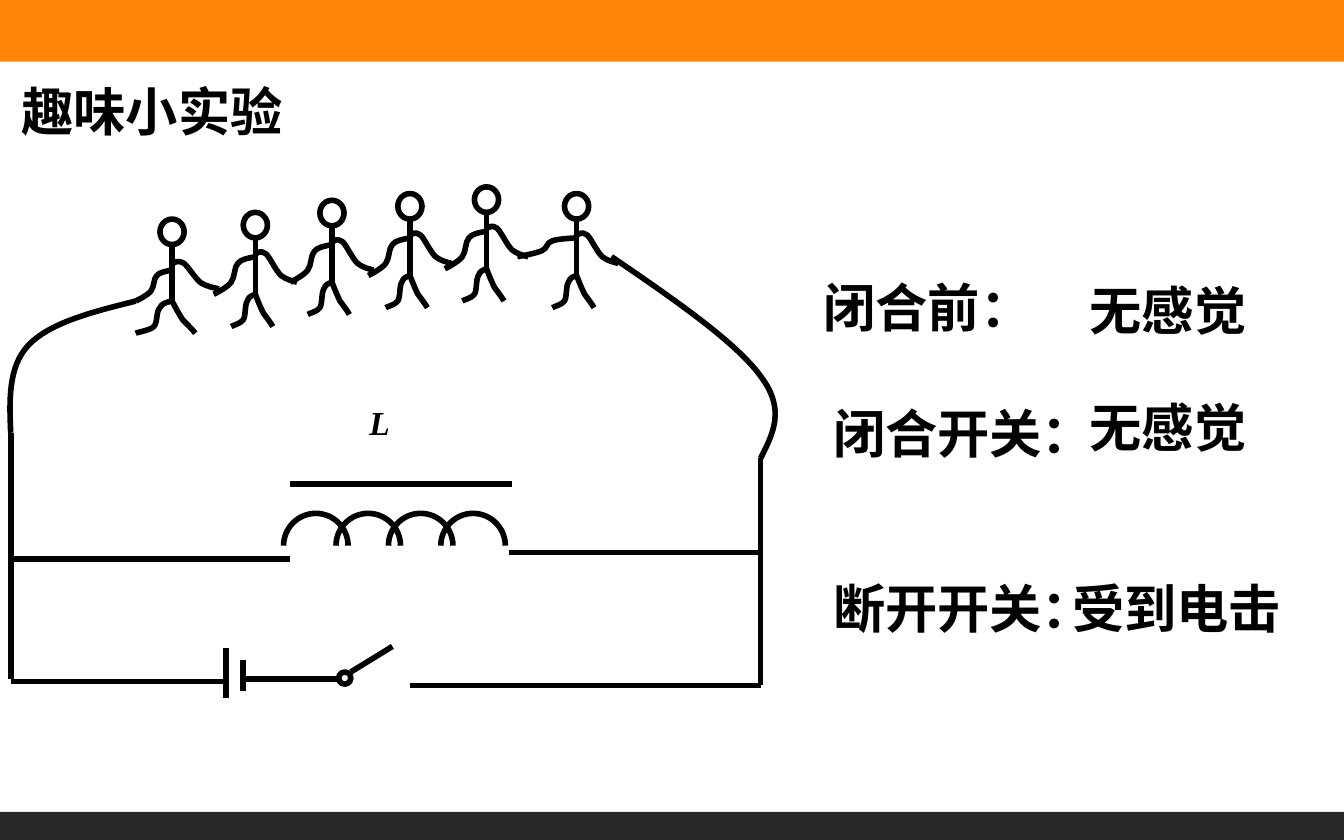
import pptx
import pptx.util
from lxml import etree
from pptx.dml.color import RGBColor
from pptx.enum.shapes import MSO_CONNECTOR, MSO_SHAPE
from pptx.enum.text import MSO_ANCHOR, MSO_AUTO_SIZE, PP_ALIGN
from pptx.oxml.ns import qn
from pptx.util import Inches, Pt

ORANGE = RGBColor(0xFF, 0x86, 0x07)
CHARCOAL = RGBColor(0x28, 0x28, 0x28)
BLACK = RGBColor(0, 0, 0)
WHITE = RGBColor(0xFF, 0xFF, 0xFF)

TITLE = ("趣味小实验", 0.06, 0.54, 5.53)
# text, left, top, width
OBSERVATIONS = [
    ("闭合前：", 6.03, 2, 2.25),
    ("闭合开关：", 6.1, 2.94, 2.25),
    ("断开开关：", 6.1, 4.24, 2.25),
    ("无感觉", 8.01, 2.02, 1.58),
    ("无感觉", 8.01, 2.89, 1.58),
    ("受到电击", 7.88, 4.24, 2.04),
]
BARS = [(-0.04, 0.5, ORANGE), (6.04, 0.21, CHARCOAL)]  # top, height, colour

# Limbs are cubic curves given from the joint where they start.
BACK_LEG = [(0, 0), (-0.03, 0.01), (-0.05, 0.02), (-0.06, 0.05), (-0.08, 0.08),
            (-0.07, 0.16), (-0.09, 0.19), (-0.11, 0.22), (-0.17, 0.23), (-0.18, 0.24)]
FRONT_LEG = [(0, 0), (0.02, 0.05), (0.04, 0.1), (0.06, 0.14),
             (0.09, 0.18), (0.12, 0.22), (0.13, 0.24)]
LEFT_ARM = [(0, 0), (-0.05, 0.01), (-0.11, 0.02), (-0.13, 0.05), (-0.16, 0.08),
            (-0.15, 0.15), (-0.18, 0.19), (-0.21, 0.23), (-0.29, 0.27), (-0.31, 0.28)]
RIGHT_ARM = [(0, 0), (0.02, -0.01), (0.04, -0.03), (0.08, 0), (0.11, 0.03),
             (0.15, 0.12), (0.19, 0.16), (0.23, 0.19), (0.27, 0.2), (0.31, 0.21)]
# curve, height of the joint above the hip, x scale, y scale
USUAL_LIMBS = {
    "back leg": (BACK_LEG, 0, 1, 1),
    "front leg": (FRONT_LEG, 0, 1, 1),
    "left arm": (LEFT_ARM, 0.28, 1, 1),
    "right arm": (RIGHT_ARM, 0.3, 1, 1),
}
# x and y of the hip, limbs that differ from the usual
PEOPLE = [
    (1.28, 2.24, {"back leg": (BACK_LEG, 0, 1.5, 1),
                  "front leg": (FRONT_LEG, 0, 1.33, 1),
                  "left arm": (LEFT_ARM, 0.23, 0.87, 0.82),
                  "right arm": (RIGHT_ARM, 0.28, 1.13, 0.9)}),
    (1.9, 2.19, {}),
    (2.47, 2.1, {}),
    (3.05, 2.05, {}),
    (3.62, 2, {}),
    (4.29, 2.05, {"left arm": (LEFT_ARM, 0.28, 1.42, 0.5)}),
]
BODY, HEAD_WIDTH, HEAD_HEIGHT = 0.42, 0.18, 0.19

LEFT, RIGHT = 0.08, 5.66  # the two upright wires
WIRES = [
    (1.68, 4.82, 1.68, 5.19), (1.81, 4.91, 1.81, 5.14),  # battery
    (1.81, 5.05, 2.52, 5.05), (2.61, 5, 2.92, 4.81),     # switch
    (3.05, 5.1, RIGHT, 5.1), (1.68, 5.07, LEFT, 5.07),
    (LEFT, 5.05, LEFT, 3.22), (LEFT, 4.16, 2.16, 4.16),
    (3.79, 4.11, RIGHT, 4.11), (RIGHT, 3.41, RIGHT, 5.1),
    (2.16, 3.6, 3.81, 3.6),                              # iron core
]
LEADS = [
    [(LEFT, 3.22), (0.07, 2.98), (0.06, 2.73), (0.21, 2.57),
     (0.37, 2.4), (0.69, 2.32), (1.01, 2.24)],
    [(RIGHT, 3.41), (5.75, 3.23), (5.85, 3.05), (RIGHT, 2.8),
     (5.48, 2.55), (5.02, 2.23), (4.55, 1.91)],
]
LOOPS, LOOP_LEFT, LOOP_BASE, LOOP_PITCH, RADIUS = 4, 2.11, 4.06, 0.39, 0.24

prs = pptx.Presentation()
prs.slide_width, prs.slide_height = Inches(10), Inches(6.25)
slide = prs.slides.add_slide(prs.slide_layouts[5])
shapes = slide.shapes


def ink(line):
    line.color.rgb = BLACK
    line.width = Pt(3)


def add_box(kind, left, top, width, height, fill=None):
    """Add a filled shape without outline, or an outlined one without fill."""
    box = shapes.add_shape(kind, Inches(left), Inches(top), Inches(width), Inches(height))
    box.shadow.inherit = False
    if fill is None:
        box.fill.background()
        ink(box.line)
    else:
        box.fill.solid()
        box.fill.fore_color.rgb = fill
        box.line.fill.background()


def add_wire(x1, y1, x2, y2):
    wire = shapes.add_connector(MSO_CONNECTOR.STRAIGHT,
                                Inches(x1), Inches(y1), Inches(x2), Inches(y2))
    ink(wire.line)
    etree.SubElement(wire._element.spPr, qn("a:effectLst"))


def add_curve(points):
    """Draw cubic curves: a start, then two controls and an end for each."""
    start, *rest = [(Inches(x), Inches(y)) for x, y in points]
    builder = shapes.build_freeform(*start)
    builder.add_line_segments(rest, close=False)
    curve = builder.convert_to_shape()
    curve.shadow.inherit = False
    curve.fill.background()
    ink(curve.line)
    segments = list(curve._element.iter(qn("a:lnTo")))
    for i in range(0, len(segments), 3):
        bezier = etree.Element(qn("a:cubicBezTo"))
        segments[i].addprevious(bezier)
        for segment in segments[i:i + 3]:
            bezier.append(segment[0])
            segment.getparent().remove(segment)


def add_person(x, hip, special_limbs):
    neck = hip - BODY
    add_wire(x, neck, x, hip)
    add_box(MSO_SHAPE.OVAL, x - HEAD_WIDTH / 2, neck - HEAD_HEIGHT, HEAD_WIDTH, HEAD_HEIGHT)
    for limb, rise, sx, sy in (USUAL_LIMBS | special_limbs).values():
        add_curve([(x + dx * sx, hip - rise + dy * sy) for dx, dy in limb])


def write(area, text, left, top, width, height=0.57, size=28, font="Arial"):
    area.left, area.top = Inches(left), Inches(top)
    area.width, area.height = Inches(width), Inches(height)
    frame = area.text_frame
    frame.text = text
    frame.word_wrap = True
    frame.auto_size = MSO_AUTO_SIZE.NONE
    frame.vertical_anchor = MSO_ANCHOR.TOP
    paragraph = frame.paragraphs[0]
    paragraph.alignment = PP_ALIGN.LEFT
    paragraph.font.name = font
    paragraph.font.size = Pt(size)
    paragraph.font.bold = True
    paragraph.font.color.rgb = BLACK
    return paragraph


def new_text():
    return shapes.add_textbox(0, 0, 0, 0)


for top, height, colour in BARS:
    add_box(MSO_SHAPE.RECTANGLE, 0, top, 10, height, colour)
write(shapes.title, *TITLE)

for person in PEOPLE:
    add_person(*person)
for wire in WIRES:
    add_wire(*wire)
add_box(MSO_SHAPE.OVAL, 2.52, 5, 0.09, 0.09)
for lead in LEADS:
    add_curve(lead)

add_box(MSO_SHAPE.RECTANGLE, 2.19, 3.99, 1.59, 0.36, WHITE)
bulge = 0.55 * RADIUS  # control distance that makes a quarter circle
for loop in range(LOOPS):
    left = LOOP_LEFT + loop * LOOP_PITCH
    middle, right, crest = left + RADIUS, left + 2 * RADIUS, LOOP_BASE - RADIUS
    add_curve([(left, LOOP_BASE), (left, LOOP_BASE - bulge), (middle - bulge, crest),
               (middle, crest), (middle + bulge, crest), (right, LOOP_BASE - bulge),
               (right, LOOP_BASE)])

inductor = write(new_text(), "L", 2.65, 2.94, 0.58, 0.47, 18, "Times New Roman")
inductor.font.italic = True
inductor.alignment = PP_ALIGN.JUSTIFY
for observation in OBSERVATIONS:
    write(new_text(), *observation)

prs.save("out.pptx")
